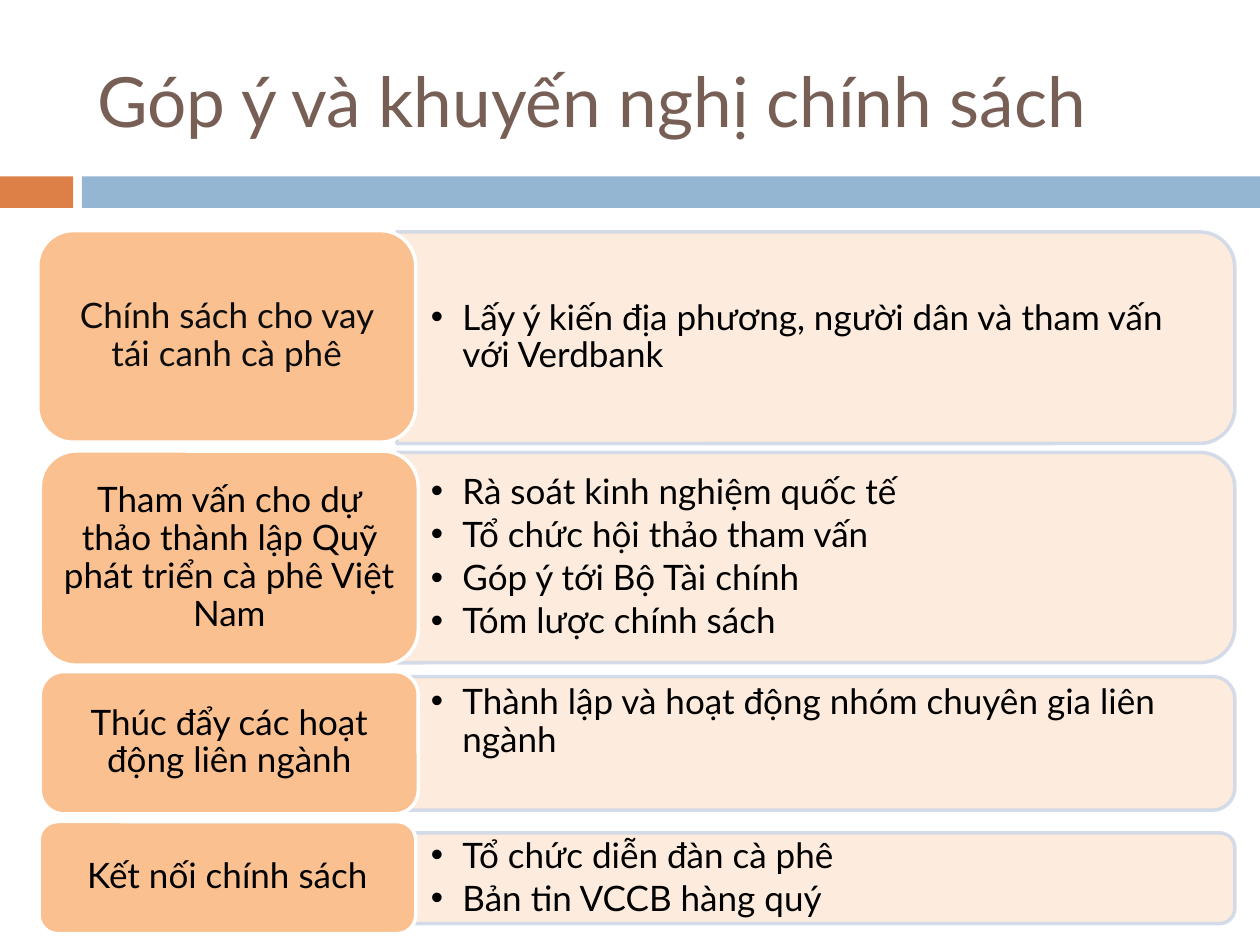
from dataclasses import dataclass

from lxml import etree
from pptx import Presentation
from pptx.dml.color import RGBColor
from pptx.enum import shapes, text
from pptx.oxml.ns import qn
from pptx.util import Inches, Pt

WHITE = RGBColor(0xFF, 0xFF, 0xFF)
BLACK = RGBColor(0, 0, 0)
INK = RGBColor(0x0D, 0x0D, 0x0D)
BROWN = RGBColor(0x77, 0x5F, 0x55)
RUST = RGBColor(0xDD, 0x80, 0x47)
BLUE = RGBColor(0x94, 0xB6, 0xD2)
CREAM = RGBColor(0xFD, 0xEA, 0xDA)
PEACH = RGBColor(0xFA, 0xC0, 0x90)
MIST = RGBColor(0xD0, 0xD8, 0xE8)
FONT = "Lato"
KIND = shapes.MSO_SHAPE

prs = Presentation()
prs.slide_width, prs.slide_height = Inches(10), Inches(7.5)
UNIT = prs.slide_width / 100  # the slide is a grid of 100 by 75 square cells


@dataclass
class Box:
    x: float
    y: float
    w: float
    h: float

    def emu(self) -> list[int]:
        return [round(v * UNIT) for v in (self.x, self.y, self.w, self.h)]

    def turned(self) -> "Box":
        """Frame that covers this box once rotated by a quarter turn."""
        shift = (self.w - self.h) / 2
        return Box(self.x + shift, self.y - shift, self.h, self.w)


@dataclass
class Row:
    label: str
    items: list[str]
    tag: Box
    top: float
    high: float
    ink: RGBColor = BLACK
    lift: float = 0


ROWS = [
    Row("Chính sách cho vay tái canh cà phê",
        ["Lấy ý kiến địa phương, người dân và tham vấn với Verdbank"],
        Box(3, 18.3, 30, 16.8), 18.4, 16.8, INK),
    Row("Tham vấn cho dự thảo thành lập Quỹ phát triển cà phê Việt Nam",
        ["Rà soát kinh nghiệm quốc tế", "Tổ chức hội thảo tham vấn",
         "Góp ý tới Bộ Tài chính", "Tóm lược chính sách"],
        Box(3.2, 35.8, 30, 17), 35.9, 16.7),
    Row("Thúc đẩy các hoạt động liên ngành",
        ["Thành lập và hoạt động nhóm chuyên gia liên ngành"],
        Box(3.2, 53.3, 30, 11.3), 53.7, 10.6, lift=1.7),
    Row("Kết nối chính sách",
        ["Tổ chức diễn đàn cà phê", "Bản tin VCCB hàng quý"],
        Box(3.1, 65.2, 29.9, 8.9), 66.1, 7.2),
]


def place(item, box: Box) -> None:
    item.left, item.top, item.width, item.height = box.emu()


def fade(fill, share: int) -> None:
    """Give a solid fill an opacity in percent."""
    for clr in fill._xPr.iter(qn("a:srgbClr")):
        etree.SubElement(clr, qn("a:alpha"), val=str(share * 1000))


def draw(slide, kind, box: Box, fill: RGBColor, line: RGBColor | None = None):
    shape = slide.shapes.add_shape(kind, *box.emu())
    shape.shadow.inherit = False
    shape.fill.solid()
    shape.fill.fore_color.rgb = fill
    if line is None:
        shape.line.fill.background()
    else:
        shape.line.color.rgb = line
        shape.line.width = Pt(2)
    return shape


def write(shape, lines: list[str], size: float, ink: RGBColor, align,
          inset: tuple[float, float], para: dict) -> None:
    frame = shape.text_frame
    side, edge = map(Inches, inset)
    form = dict(word_wrap=True, auto_size=text.MSO_AUTO_SIZE.NONE,
                vertical_anchor=text.MSO_ANCHOR.MIDDLE, margin_left=side,
                margin_right=side, margin_top=edge, margin_bottom=edge)
    for key, val in form.items():
        setattr(frame, key, val)
    frame.text = "\n".join(lines)
    for p in frame.paragraphs:
        for key, val in dict(alignment=align, **para).items():
            setattr(p, key, val)
        for run in p.runs:
            for key, val in dict(name=FONT, size=Pt(size), bold=False).items():
                setattr(run.font, key, val)
            run.font.color.rgb = ink


def bullet(p) -> None:
    props = p._p.get_or_add_pPr()
    props.set("marL", str(Inches(0.25)))
    props.set("indent", str(-Inches(0.25)))
    etree.SubElement(props, qn("a:buFont"), typeface="Arial")
    etree.SubElement(props, qn("a:buChar"), char="•")


def add_row(slide, row: Row, body) -> None:
    area = Box(31.5, row.top, 66.5, row.high)
    panel = draw(slide, KIND.ROUND_2_SAME_RECTANGLE, area.turned(), CREAM, MIST)
    panel.rotation = 90
    fade(panel.fill, 90)
    fade(panel.line.fill, 90)

    place(body, Box(area.x, area.y - row.lift, area.w, area.h))
    slide.shapes._spTree.append(body._element)  # bring above the panel
    tight = dict(line_spacing=0.9, space_before=Pt(0))
    write(body, row.items, 20, BLACK, text.PP_ALIGN.LEFT, (0.27, 0.14),
          dict(tight, space_after=Pt(3)))
    for p in body.text_frame.paragraphs:
        bullet(p)

    tag = draw(slide, KIND.ROUNDED_RECTANGLE, row.tag, PEACH, WHITE)
    write(tag, [row.label], 20, row.ink, text.PP_ALIGN.CENTER, (0.08, 0.04), tight)


def main() -> None:
    slide = prs.slides.add_slide(prs.slide_layouts[4])  # title and four bodies
    title, *bodies = slide.placeholders
    draw(slide, KIND.RECTANGLE, Box(0, 14, 5.8, 2.5), RUST)
    draw(slide, KIND.RECTANGLE, Box(6.5, 14, 93.5, 2.5), BLUE)
    place(title, Box(6.7, 2.5, 89.2, 10.8))
    write(title, ["Góp ý và khuyến nghị chính sách"], 39.6, BROWN,
          text.PP_ALIGN.LEFT, (0.1, 0.05), {})
    for row, body in zip(ROWS, bodies):
        add_row(slide, row, body)
    prs.save("out.pptx")


if __name__ == "__main__":
    main()
